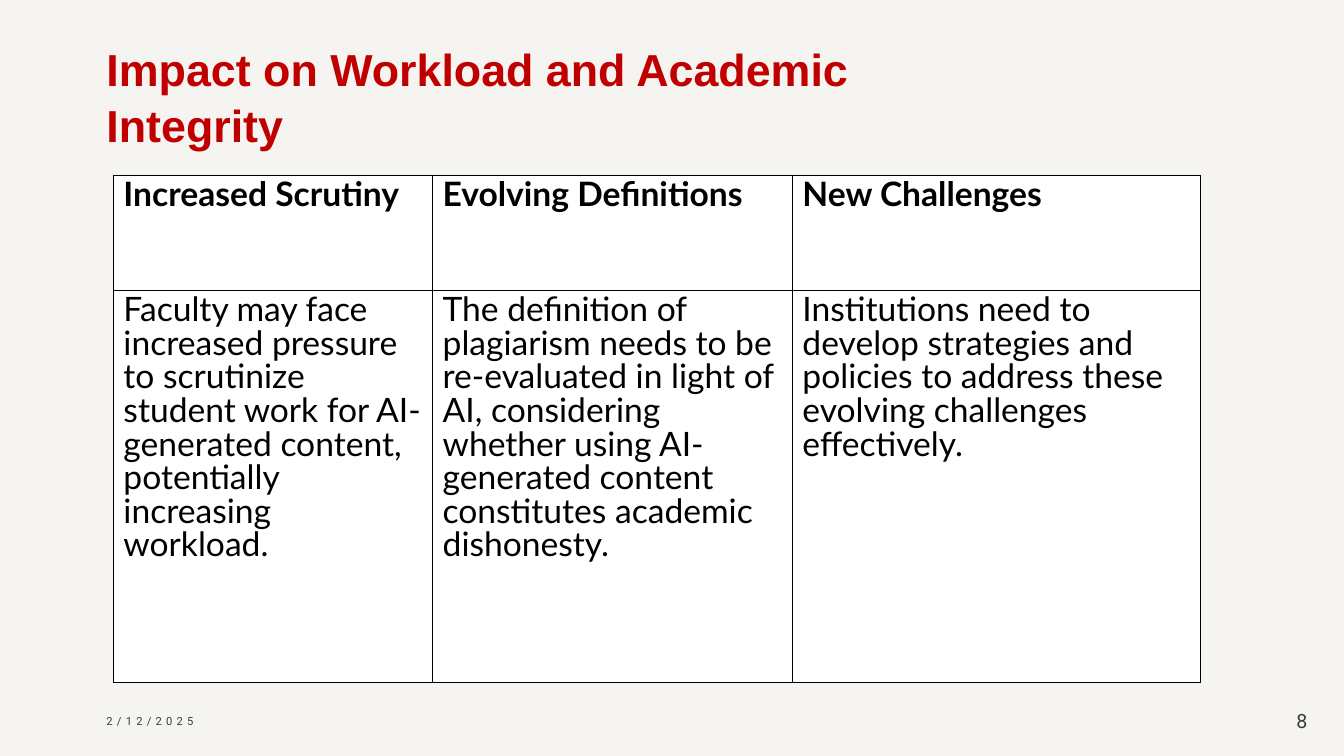
from dataclasses import dataclass

from lxml.etree import SubElement
from pptx import Presentation
from pptx.dml.color import RGBColor
from pptx.enum.shapes import MSO_SHAPE as Shape
from pptx.enum.text import MSO_ANCHOR as Anchor, PP_ALIGN as Align
from pptx.oxml import parse_xml
from pptx.oxml.ns import nsdecls, qn
from pptx.util import Pt


@dataclass(frozen=True)
class Theme:
    wash: str = "C0B7A5"
    wash_opacity: int = 15
    title: str = "C00000"
    footer: str = "35403A"
    ink: str = "000000"
    paper: str = "FFFFFF"
    title_font: str = "Arial"
    table_font: str = "Lato"
    footer_font: str = "Roboto"
    title_size: int = 32
    table_size: int = 24
    date_size: int = 8
    number_size: int = 14
    border: float = 0.61


@dataclass(frozen=True)
class Box:
    left: float
    top: float
    width: float
    height: float

    def lengths(self):
        return Pt(self.left), Pt(self.top), Pt(self.width), Pt(self.height)


THEME = Theme()
PAGE = Box(0, 0, 960, 540)
TITLE = Box(69, 52, 679, 60)
TABLE = Box(81, 125.3, 776.5, 362)
FOOTER = Box(69, 500.5, 872, 29)

COLUMN_WIDTHS = (228, 257, 291.5)
ROW_HEIGHTS = (82, 280)
TOPICS = (
    ("Increased Scrutiny", "Evolving Definitions", "New Challenges"),
    (
        "Faculty may face increased pressure to scrutinize student work for "
        "AI-generated content, potentially increasing workload.",
        "The definition of plagiarism needs to be re-evaluated in light of AI, "
        "considering whether using AI-generated content constitutes academic "
        "dishonesty.",
        "Institutions need to develop strategies and policies to address these "
        "evolving challenges effectively.",
    ),
)


def style_font(para, name, size, color, bold=False):
    for span in para.runs:
        span.font.name = name
        span.font.size = Pt(size)
        span.font.bold = bold
        span.font.color.rgb = RGBColor.from_string(color)


def add_text(page, box, text, anchor):
    """Add a wrapping text box and return its frame."""
    frame = page.shapes.add_textbox(*box.lengths()).text_frame
    frame.word_wrap = True
    frame.vertical_anchor = anchor
    frame.text = text
    return frame


def add_wash(page, box):
    """Tint the page with a translucent rectangle."""
    wash = page.shapes.add_shape(Shape.RECTANGLE, *box.lengths())
    wash.shadow.inherit = False
    wash.line.fill.background()
    wash.fill.solid()
    wash.fill.fore_color.rgb = RGBColor.from_string(THEME.wash)
    color = wash.fill._xPr.find(qn("a:solidFill"))[0]
    SubElement(color, qn("a:alpha"), val=str(THEME.wash_opacity * 1000))


def add_title(page, box):
    frame = add_text(page, box, "Impact on Workload and Academic Integrity",
                     Anchor.BOTTOM)
    frame.margin_right = Pt(16)
    para = frame.paragraphs[0]
    para.line_spacing = 1.05
    style_font(para, THEME.title_font, THEME.title_size, THEME.title, True)


def add_borders(cell):
    properties = cell._tc.get_or_add_tcPr()
    for index, side in enumerate(("lnL", "lnR", "lnT", "lnB")):
        properties.insert(index, parse_xml(
            f'<a:{side} {nsdecls("a")} w="{Pt(THEME.border)}"><a:solidFill>'
            f'<a:srgbClr val="{THEME.ink}"/></a:solidFill></a:{side}>'))


def add_topics(page, box):
    table = page.shapes.add_table(
        len(ROW_HEIGHTS), len(COLUMN_WIDTHS), *box.lengths()).table
    table.horz_banding = False
    for column, width in zip(table.columns, COLUMN_WIDTHS):
        column.width = Pt(width)
    for index, (row, height) in enumerate(zip(table.rows, ROW_HEIGHTS)):
        row.height = Pt(height)
        for cell, text in zip(row.cells, TOPICS[index]):
            cell.text = text
            cell.fill.solid()
            cell.fill.fore_color.rgb = RGBColor.from_string(THEME.paper)
            add_borders(cell)
            para = cell.text_frame.paragraphs[0]
            para.line_spacing = Pt(24)
            style_font(para, THEME.table_font, THEME.table_size, THEME.ink,
                       bold=index == 0)


def add_footer(page, box):
    """Put the date at the left end of the box and the page number at the right."""
    date_box = Box(box.left, box.top, 216, box.height)
    date = add_text(page, date_box, "2/12/2025", Anchor.MIDDLE).paragraphs[0]
    style_font(date, THEME.footer_font, THEME.date_size, THEME.footer)
    date.runs[0].font._element.set("spc", "300")

    number_width = 41
    number_box = Box(box.left + box.width - number_width, box.top,
                     number_width, box.height)
    number = add_text(page, number_box, "8", Anchor.MIDDLE).paragraphs[0]
    number.alignment = Align.RIGHT
    style_font(number, THEME.footer_font, THEME.number_size, THEME.footer)


def main():
    deck = Presentation()
    deck.slide_width, deck.slide_height = Pt(PAGE.width), Pt(PAGE.height)
    page = deck.slides.add_slide(deck.slide_layouts[6])
    add_wash(page, PAGE)
    add_title(page, TITLE)
    add_topics(page, TABLE)
    add_footer(page, FOOTER)
    deck.save("out.pptx")


if __name__ == "__main__":
    main()
